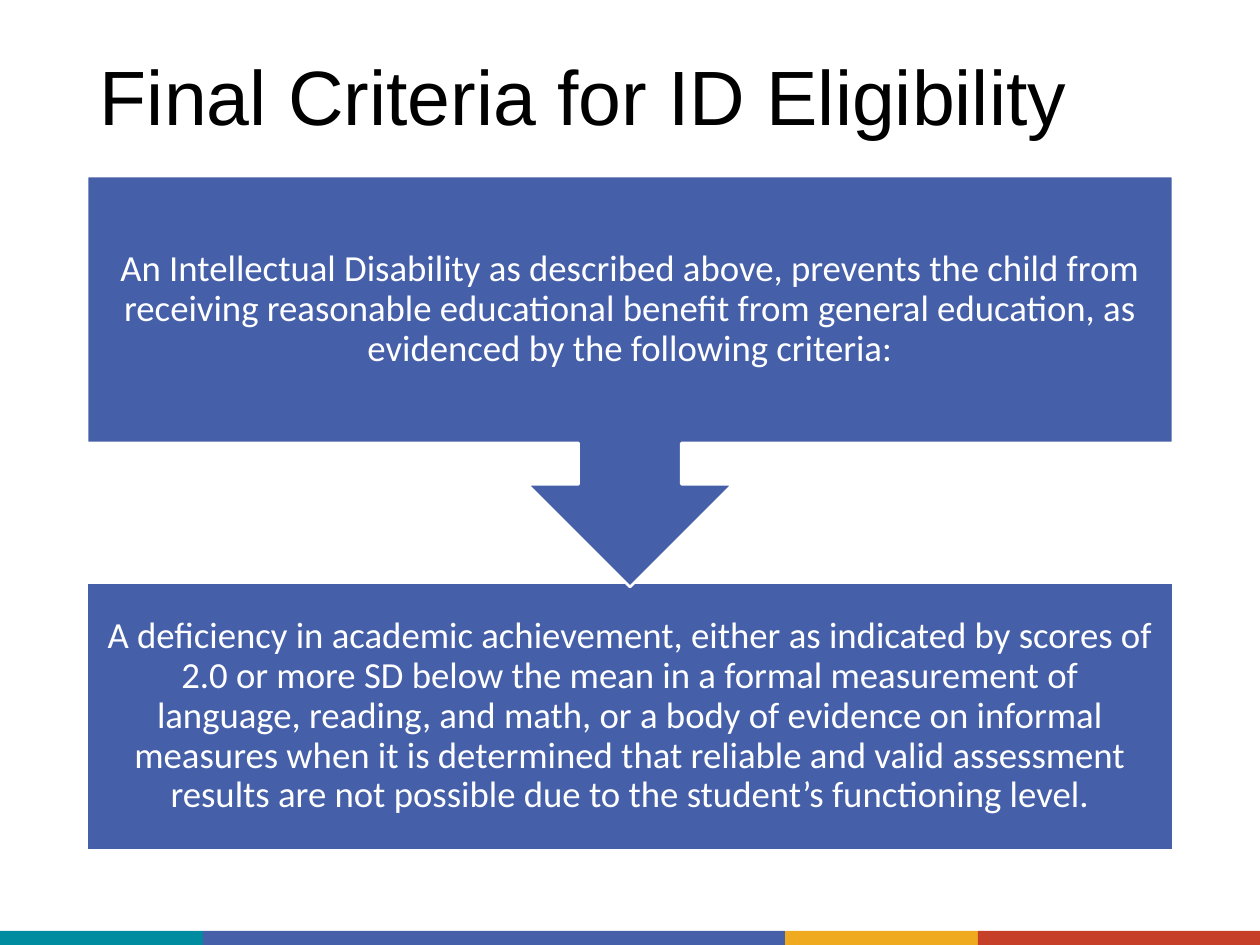
from pptx import Presentation
from pptx.dml.color import RGBColor
from pptx.enum.shapes import MSO_SHAPE as SHAPE
from pptx.enum.text import MSO_ANCHOR as ANCHOR, PP_ALIGN as ALIGN
from pptx.util import Inches, Pt

COLORS = {
    "teal": "008CA0",
    "blue": "455FA9",
    "gold": "EFAA1F",
    "red": "C63F28",
    "white": "FFFFFF",
    "black": "000000",
}


def px(length):
    return round(length * Inches(1) / 126)


def write(frame, text, font, size, color, align, inset_x, inset_y):
    frame.word_wrap = True
    frame.vertical_anchor = ANCHOR.MIDDLE
    frame.margin_left = frame.margin_right = px(inset_x)
    frame.margin_top = frame.margin_bottom = px(inset_y)
    paragraph = frame.paragraphs[0]
    paragraph.alignment = align
    paragraph.line_spacing = 0.9
    run = paragraph.add_run()
    run.text = text
    run.font.name = font
    run.font.size = Pt(size)
    run.font.color.rgb = RGBColor.from_string(COLORS[color])


deck = Presentation()
deck.slide_width = px(1260)
deck.slide_height = px(945)
slide = deck.slides.add_slide(deck.slide_layouts[6])

stripe_left = 0
for color, width in [("teal", 203), ("blue", 582), ("gold", 193), ("red", 282)]:
    stripe = slide.shapes.add_shape(
        SHAPE.RECTANGLE, px(stripe_left), px(931), px(width), px(14))
    stripe.shadow.inherit = False
    stripe.fill.solid()
    stripe.fill.fore_color.rgb = RGBColor.from_string(COLORS[color])
    stripe.line.fill.background()
    stripe_left += width

title = slide.shapes.add_textbox(px(87), px(50), px(1086), px(101))
write(title.text_frame, "Final Criteria for ID Eligibility",
      "Arial", 44, "black", ALIGN.LEFT, 13, 6)

criteria = [
    (SHAPE.RECTANGLE, 583, 267,
     "A deficiency in academic achievement, either as indicated by scores of "
     "2.0 or more SD below the mean in a formal measurement of language, "
     "reading, and math, or a body of evidence on informal measures when it is "
     "determined that reliable and valid assessment results are not possible "
     "due to the student’s functioning level."),
    (SHAPE.DOWN_ARROW_CALLOUT, 176, 411,
     "An Intellectual Disability as described above, prevents the child from "
     "receiving reasonable educational benefit from general education, as "
     "evidenced by the following criteria:"),
]
for outline, top, height, text in criteria:
    step = slide.shapes.add_shape(outline, px(87), px(top), px(1086), px(height))
    step.shadow.inherit = False
    step.fill.solid()
    step.fill.fore_color.rgb = RGBColor.from_string(COLORS["blue"])
    step.line.color.rgb = RGBColor.from_string(COLORS["white"])
    step.line.width = Pt(1.5)
    write(step.text_frame, text, "Calibri", 21, "white", ALIGN.CENTER, 20, 20)

deck.save("out.pptx")
